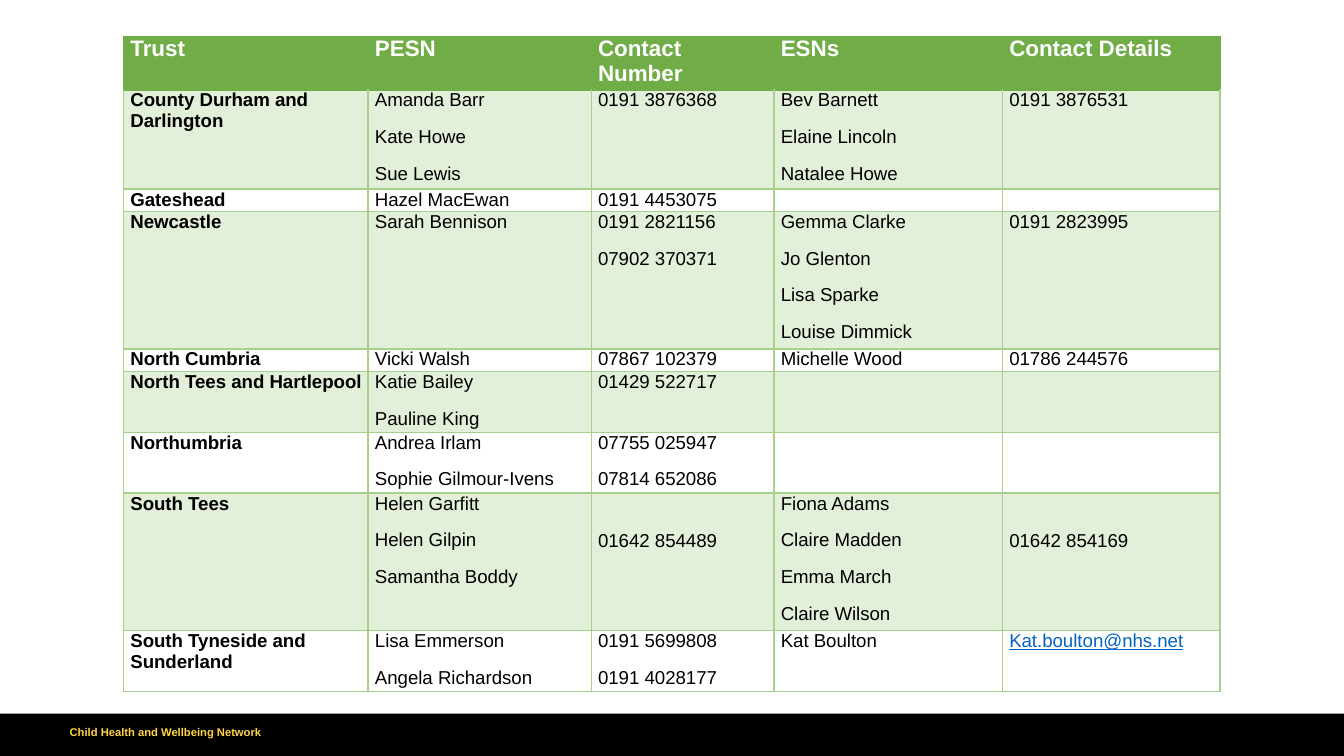
from lxml.etree import SubElement
from pptx import Presentation
from pptx.dml.color import RGBColor
from pptx.enum.shapes import MSO_SHAPE
from pptx.oxml import parse_xml
from pptx.oxml.ns import nsdecls, qn
from pptx.util import Inches, Pt

HEADINGS = ["Trust", "PESN", "Contact Number", "ESNs", "Contact Details"]
TRUSTS = [
    ("County Durham and Darlington", ["Amanda Barr", "Kate Howe", "Sue Lewis"],
     ["0191 3876368"], ["Bev Barnett", "Elaine Lincoln", "Natalee Howe"], ["0191 3876531"]),
    ("Gateshead", ["Hazel MacEwan"], ["0191 4453075"], [], []),
    ("Newcastle", ["Sarah Bennison"], ["0191 2821156", "07902 370371"],
     ["Gemma Clarke", "Jo Glenton", "Lisa Sparke", "Louise Dimmick"], ["0191 2823995"]),
    ("North Cumbria", ["Vicki Walsh"], ["07867 102379"], ["Michelle Wood"], ["01786 244576"]),
    ("North Tees and Hartlepool", ["Katie Bailey", "Pauline King"], ["01429 522717"], [], []),
    ("Northumbria", ["Andrea Irlam", "Sophie Gilmour-Ivens"],
     ["07755 025947", "07814 652086"], [], []),
    ("South Tees", ["Helen Garfitt", "Helen Gilpin", "Samantha Boddy"], ["01642 854489"],
     ["Fiona Adams", "Claire Madden", "Emma March", "Claire Wilson"], ["01642 854169"]),
    ("South Tyneside and Sunderland", ["Lisa Emmerson", "Angela Richardson"],
     ["0191 5699808", "0191 4028177"], ["Kat Boulton"], ["Kat.boulton@nhs.net"]),
]
SECOND_LINE = {"01642 854489", "01642 854169"}
NETWORK = "Child Health and Wellbeing Network"

COLUMN_WIDTHS = [1.82, 1.66, 1.36, 1.7, 1.62]
ROW_HEIGHTS = [0.4, 0.72, 0.16, 1, 0.16, 0.44, 0.44, 1, 0.44]
LINE_PITCH = 0.28
GREEN, LIGHT_GREEN, PALE_GREEN = "70AD47", "A8D08D", "E2EFD9"
WHITE, BLACK, YELLOW, LINK_BLUE = "FFFFFF", "000000", "FFD444", "0563C1"


def paint(fill, colour):
    fill.solid()
    fill.fore_color.rgb = RGBColor.from_string(colour)


def style(paragraph, size, colour, bold):
    for run in paragraph.runs:
        font = run.font
        font.name, font.size, font.bold = "Arial", Pt(size), bold
        font.color.rgb = RGBColor.from_string(colour)
        if "@" in run.text:
            font.underline = True


def draw_borders(cell, colour, top_colour):
    sides = [("lnL", colour), ("lnR", colour), ("lnT", top_colour), ("lnB", colour)]
    for position, (side, shade) in enumerate(sides):
        cell._tc.get_or_add_tcPr().insert(position, parse_xml(
            f'<a:{side} {nsdecls("a")} w="{Pt(1)}"><a:solidFill>'
            f'<a:srgbClr val="{shade}"/></a:solidFill></a:{side}>'))


def fill_cell(cell, lines, size, colour, bold, background):
    cell.margin_left, cell.margin_right = Inches(0.05), Inches(0.03)
    cell.margin_top = Inches(LINE_PITCH if SECOND_LINE & set(lines) else 0)
    cell.margin_bottom = 0
    paint(cell.fill, background)
    cell.text_frame.text = "\n".join(lines)
    for paragraph in cell.text_frame.paragraphs:
        paragraph.line_spacing = 1.0
        paragraph.space_after = Pt(8.5)
        style(paragraph, size, LINK_BLUE if "@" in paragraph.text else colour, bold)
        if not lines:
            SubElement(paragraph._p, qn("a:endParaRPr")).set("sz", str(size * 100))


def add_contacts(slide):
    table = slide.shapes.add_table(
        len(TRUSTS) + 1, len(HEADINGS), Inches(0.92), Inches(0.27),
        Inches(sum(COLUMN_WIDTHS)), Inches(sum(ROW_HEIGHTS))).table
    for column, width in zip(table.columns, COLUMN_WIDTHS):
        column.width = Inches(width)
    for row, height in zip(table.rows, ROW_HEIGHTS):
        row.height = Inches(height)
    for c, heading in enumerate(HEADINGS):
        fill_cell(table.cell(0, c), [heading], 12, WHITE, True, GREEN)
        draw_borders(table.cell(0, c), GREEN, GREEN)
    for r, (trust, *contacts) in enumerate(TRUSTS, 1):
        background = PALE_GREEN if r % 2 else WHITE
        for c, lines in enumerate([[trust], *contacts]):
            cell = table.cell(r, c)
            fill_cell(cell, lines, 10, BLACK, c == 0, background)
            draw_borders(cell, LIGHT_GREEN, GREEN if r == 1 else LIGHT_GREEN)


def add_footer(slide):
    bar = slide.shapes.add_shape(
        MSO_SHAPE.RECTANGLE, 0, Inches(5.31), Inches(10), Inches(0.33))
    bar.shadow.inherit = False
    paint(bar.fill, BLACK)
    bar.line.fill.background()
    network = slide.shapes.add_textbox(
        Inches(0.42), Inches(5.36), Inches(2.31), Inches(0.24)).text_frame
    network.word_wrap = True
    network.text = NETWORK
    network.paragraphs[0].line_spacing = 0.9
    style(network.paragraphs[0], 6, YELLOW, True)


def main():
    deck = Presentation()
    deck.slide_width = Inches(10)
    deck.slide_height = deck.slide_width * 9 // 16
    slide = deck.slides.add_slide(deck.slide_layouts[6])
    add_footer(slide)
    add_contacts(slide)
    deck.save("out.pptx")


if __name__ == "__main__":
    main()
